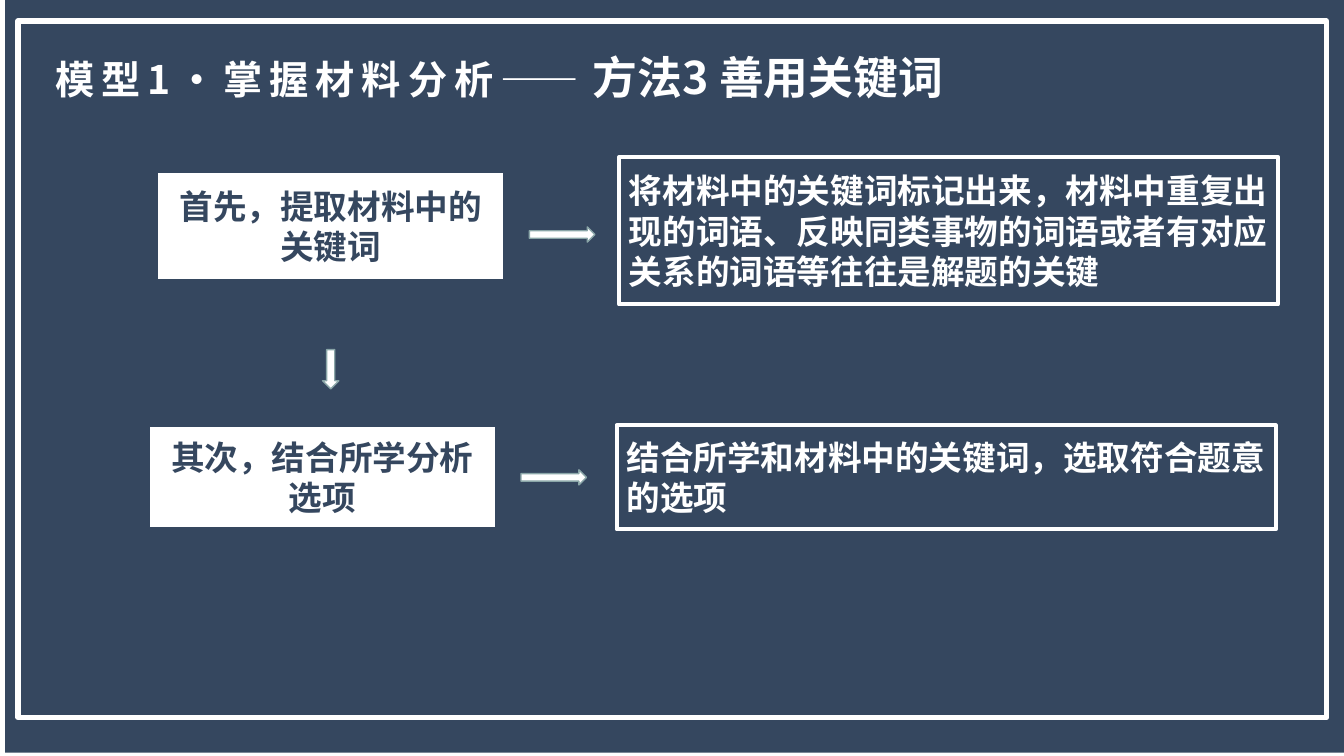
from dataclasses import dataclass
from typing import Optional

import pptx
import pptx.dml.color
import pptx.enum.lang
import pptx.enum.shapes
import pptx.enum.text
import pptx.oxml
import pptx.oxml.ns
import pptx.shapes.autoshape
import pptx.slide
import pptx.util
from pptx.util import Cm

NAVY = pptx.dml.color.RGBColor(0x35, 0x47, 0x5F)
WHITE = pptx.dml.color.RGBColor(0xFF, 0xFF, 0xFF)
SAGE = pptx.dml.color.RGBColor(0x8A, 0xA6, 0xA8)
FONT = "Noto Sans CJK SC"

SHAPE = pptx.enum.shapes.MSO_SHAPE
ALIGN = pptx.enum.text.PP_ALIGN
ANCHOR = pptx.enum.text.MSO_ANCHOR


@dataclass(frozen=True)
class Style:
    preset: SHAPE = SHAPE.RECTANGLE
    fill: Optional[pptx.dml.color.RGBColor] = None
    line: Optional[pptx.dml.color.RGBColor] = None
    line_width: float = 0
    text_color: pptx.dml.color.RGBColor = WHITE
    align: ALIGN = ALIGN.LEFT


@dataclass(frozen=True)
class Block:
    style: Style
    left: float
    top: float
    width: float
    height: float
    text: str = ""


BACKDROP = Style(fill=NAVY)
FRAME = Style(line=WHITE, line_width=4)
STEP = Style(fill=WHITE, line=NAVY, line_width=2.25, text_color=NAVY, align=ALIGN.CENTER)
NOTE = Style(line=WHITE, line_width=3)
RIGHT_ARROW = Style(SHAPE.RIGHT_ARROW, fill=WHITE, line=SAGE, line_width=1)
DOWN_ARROW = Style(SHAPE.DOWN_ARROW, fill=WHITE, line=SAGE, line_width=1)

SETTING = [
    Block(BACKDROP, 0.13, -0.08, 33.87, 19.05),
    Block(FRAME, 0.46, 0.53, 32.97, 17.55),
]
FLOW = [
    Block(STEP, 3.94, 4.32, 8.79, 2.74, "首先，提取材料中的关键词"),
    Block(DOWN_ARROW, 8.13, 8.81, 0.41, 0.99),
    Block(STEP, 3.73, 10.72, 8.79, 2.59, "其次，结合所学分析选项"),
    Block(RIGHT_ARROW, 13.34, 5.72, 1.65, 0.38),
    Block(NOTE, 15.6, 3.96, 16.61, 3.71,
          "将材料中的关键词标记出来，材料中重复出现的词语、"
          "反映同类事物的词语或者有对应关系的词语等往往是解题的关键"),
    Block(NOTE, 15.54, 10.72, 16.61, 2.62, "结合所学和材料中的关键词，选取符合题意的选项"),
    Block(RIGHT_ARROW, 13.13, 11.84, 1.65, 0.38),
]


def set_attributes(target: object, values: dict) -> None:
    for name, value in values.items():
        setattr(target, name, value)


def add_run(paragraph, text: str, size: float, color: pptx.dml.color.RGBColor,
            spacing: float = 0) -> None:
    """Add a bold run; spacing is the extra space between letters in points."""
    run = paragraph.add_run()
    run.text = text
    set_attributes(run.font, {
        "name": FONT,
        "size": pptx.util.Pt(size),
        "bold": True,
        "language_id": pptx.enum.lang.MSO_LANGUAGE_ID.SIMPLIFIED_CHINESE,
    })
    run.font.color.rgb = color
    properties = run._r.get_or_add_rPr()
    properties.set("spc", str(round(spacing * 100)))
    east_asian = pptx.oxml.parse_xml(
        f'<a:ea {pptx.oxml.ns.nsdecls("a")} typeface="{FONT}"/>')
    properties.find(pptx.oxml.ns.qn("a:latin")).addnext(east_asian)


def add_block(slide: pptx.slide.Slide, block: Block) -> pptx.shapes.autoshape.Shape:
    style = block.style
    shape = slide.shapes.add_shape(
        style.preset, Cm(block.left), Cm(block.top), Cm(block.width), Cm(block.height))
    shape.shadow.inherit = False
    if style.fill is None:
        shape.fill.background()
    else:
        shape.fill.solid()
        shape.fill.fore_color.rgb = style.fill
    if style.line is None:
        shape.line.fill.background()
    else:
        shape.line.color.rgb = style.line
        shape.line.width = pptx.util.Pt(style.line_width)
    if block.text:
        set_attributes(shape.text_frame, {
            "word_wrap": True, "vertical_anchor": ANCHOR.MIDDLE})
        paragraph = shape.text_frame.paragraphs[0]
        paragraph.alignment = style.align
        add_run(paragraph, block.text, 24, style.text_color)
    return shape


def format_title(slide: pptx.slide.Slide) -> None:
    title = slide.shapes.title
    set_attributes(title, {
        "left": Cm(1.14), "top": Cm(1.12), "width": Cm(30.4), "height": Cm(2.82)})
    set_attributes(title.text_frame, {
        "word_wrap": True,
        "vertical_anchor": ANCHOR.TOP,
        "auto_size": pptx.enum.text.MSO_AUTO_SIZE.NONE,
    })
    heading = title.text_frame.paragraphs[0]
    heading.alignment = ALIGN.LEFT
    add_run(heading, "模型1·掌握材料分析——", 28, WHITE, spacing=5)
    add_run(heading, "方法3 善用关键词", 32, WHITE)


def main() -> None:
    presentation = pptx.Presentation()
    set_attributes(presentation, {"slide_width": Cm(33.87), "slide_height": Cm(19.05)})
    slide = presentation.slides.add_slide(presentation.slide_layouts[5])
    format_title(slide)
    for block in SETTING:
        frame = add_block(slide, block)
    # The title placeholder starts at the back, so lift it above the frame.
    frame._element.addnext(slide.shapes.title._element)
    for block in FLOW:
        add_block(slide, block)
    presentation.save("out.pptx")


if __name__ == "__main__":
    main()
